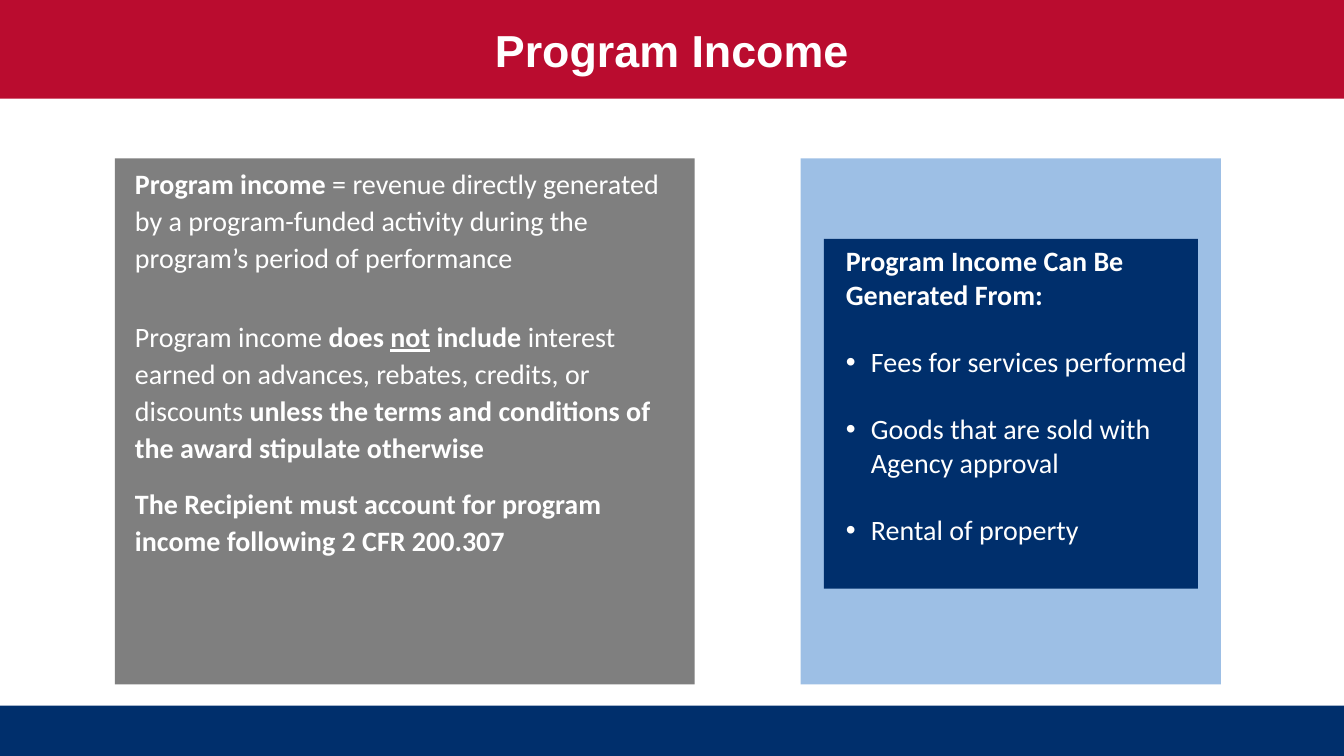
"""Build the Program Income slide."""
from lxml import etree
from pptx import Presentation
from pptx.dml.color import RGBColor
from pptx.enum.shapes import MSO_SHAPE
from pptx.enum.text import MSO_ANCHOR, PP_ALIGN
from pptx.oxml.ns import qn
from pptx.util import Inches, Pt

NAVY, RED, GRAY, SKY, WHITE = "002F6C", "BA0C2F", "7F7F7F", "9DBFE5", "FFFFFF"


def add_block(left, top, width, height, color, anchor=MSO_ANCHOR.TOP):
    """Add a plain filled rectangle and return its text frame."""
    block = slide.shapes.add_shape(
        MSO_SHAPE.RECTANGLE, Inches(left), Inches(top), Inches(width), Inches(height))
    block.shadow.inherit = False
    block.fill.solid()
    block.fill.fore_color.rgb = RGBColor.from_string(color)
    block.line.fill.background()
    block.text_frame.word_wrap = True
    block.text_frame.vertical_anchor = anchor
    return block.text_frame


def write(paragraph, runs, size=20, font="Calibri", margin=0, indent=0, **layout):
    """Fill a paragraph with (text, style) runs, where style holds b and u."""
    for text, style in runs:
        run = paragraph.add_run()
        run.text = text
        run.font.color.rgb = RGBColor.from_string(WHITE)
        look = {"name": font, "size": Pt(size), "bold": "b" in style, "underline": "u" in style}
        for name, value in look.items():
            setattr(run.font, name, value)
    for name, value in {"alignment": PP_ALIGN.LEFT, **layout}.items():
        setattr(paragraph, name, value)
    properties = paragraph._p.get_or_add_pPr()
    properties.set("marL", str(Inches(margin)))
    properties.set("indent", str(Inches(indent)))
    if indent:
        etree.SubElement(properties, qn("a:buFont"), typeface="Arial")
        etree.SubElement(properties, qn("a:buChar"), char="•")


deck = Presentation()
deck.slide_width, deck.slide_height = Inches(13.33), Inches(7.5)
slide = deck.slides.add_slide(deck.slide_layouts[6])

add_block(0, 7, 13.33, 0.5, NAVY)
title = add_block(0, 0, 13.33, 0.98, RED, MSO_ANCHOR.MIDDLE)
write(title.paragraphs[0], [("Program Income", "b")], 32, "Arial", alignment=PP_ALIGN.CENTER)

definition = add_block(1.14, 1.57, 5.75, 5.22, GRAY)
definition_parts = [
    (0, [("Program income ", "b"),
         ("= revenue directly generated by a program-funded activity during the "
          "program’s period of performance", "")]),
    (30, [("Program income ", ""), ("does ", "b"), ("not", "bu"), (" include ", "b"),
          ("interest earned on advances, rebates, credits, or discounts ", ""),
          ("unless the terms and conditions of the award stipulate otherwise", "b")]),
    (14, [("The Recipient must account for program income following 2 CFR 200.307", "b")]),
]
for number, (gap, runs) in enumerate(definition_parts):
    paragraph = definition.add_paragraph() if number else definition.paragraphs[0]
    write(paragraph, runs, margin=0.1, line_spacing=1.1, space_before=Pt(gap))

add_block(7.94, 1.57, 4.17, 5.22, SKY)
sources = add_block(8.17, 2.37, 3.71, 3.47, NAVY)
write(sources.paragraphs[0], [("Program Income Can Be Generated From:", "b")], margin=0.12)
for source in ["Fees for services performed", "Goods that are sold with Agency approval",
               "Rental of property"]:
    write(sources.add_paragraph(), [(source, "")], margin=0.37, indent=-0.25, space_before=Pt(24))

deck.save("out.pptx")
